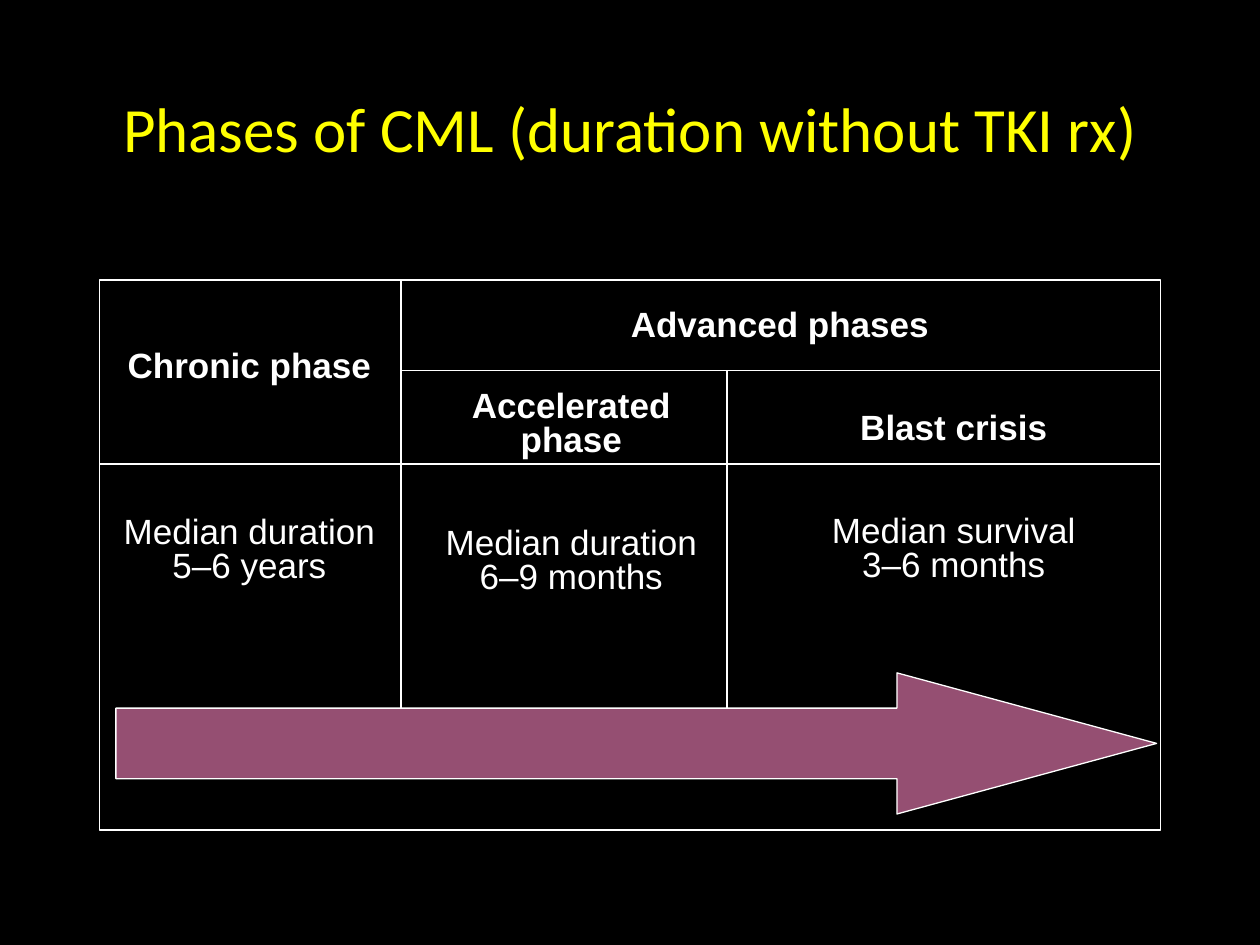
from dataclasses import dataclass

from lxml import etree
from pptx import Presentation
from pptx import util as u
from pptx.dml.color import RGBColor
from pptx.enum import shapes, text
from pptx.oxml.ns import qn


@dataclass(frozen=True)
class Theme:
    background: str = "000000"
    ink: str = "FFFFFF"
    title: str = "FFFF00"
    arrow: str = "954F72"
    title_font: str = "Calibri"
    body_font: str = "Arial"
    title_size: int = 36
    body_size: int = 20


THEME = Theme()

# Grid edges of the phase table, in inches
LEFT, ACCELERATED_X, BLAST_X, RIGHT = 0.79, 3.18, 5.77, 9.21
TOP, ADVANCED_Y, HEADER_Y, BOTTOM = 2.22, 2.94, 3.68, 6.59
DIVIDER_END = 5.8

# Box (left, top, width, height), phase, duration, gap between them in points
PHASES = [
    ((0.86, 2.74, 2.24, 2.01), "Chronic phase", "Median duration\v5–6 years", 76),
    ((3.35, 3.06, 2.37, 1.77), "Accelerated phase", "Median duration\v6–9 months", 40),
    ((5.84, 3.23, 3.46, 1.77), "Blast crisis", "Median survival\v3–6 months", 40),
    ((3.19, 2.42, 6, 0.37), "Advanced phases", None, 0),
]


def inches(*values):
    return [u.Inches(value) for value in values]


def apply(target, formats):
    for name, value in formats.items():
        setattr(target, name, value)


def add_label(slide, box, lines, anchor=text.MSO_ANCHOR.TOP, spacing=0.8):
    """Add centred text; lines holds (words, font formats, colour, gap before)."""
    frame = slide.shapes.add_textbox(*inches(*box)).text_frame
    apply(frame, {"word_wrap": True, "vertical_anchor": anchor})
    for index, (words, font, colour, gap) in enumerate(lines):
        line = frame.add_paragraph() if index else frame.paragraphs[0]
        line.text = words
        apply(line, {"alignment": text.PP_ALIGN.CENTER,
                     "line_spacing": spacing, "space_before": u.Pt(gap)})
        for run in line.runs:
            apply(run.font, font)
            run.font.color.rgb = RGBColor.from_string(colour)


def add_outlined(slide, kind, box, weight, fill=None):
    outlined = slide.shapes.add_shape(kind, *inches(*box))
    outlined.shadow.inherit = False
    if fill:
        outlined.fill.solid()
        outlined.fill.fore_color.rgb = RGBColor.from_string(fill)
    else:
        outlined.fill.background()
    outlined.line.color.rgb = RGBColor.from_string(THEME.ink)
    outlined.line.width = u.Pt(weight)
    return outlined


def add_rule(slide, *ends):
    rule = slide.shapes.add_connector(shapes.MSO_CONNECTOR.STRAIGHT, *inches(*ends))
    rule.line.color.rgb = RGBColor.from_string(THEME.ink)
    rule.line.width = u.Pt(1)
    etree.SubElement(rule._element.spPr, qn("a:effectLst"))


def add_phase(slide, box, phase, duration, gap):
    font = {"name": THEME.body_font, "size": u.Pt(THEME.body_size)}
    lines = [(phase, {**font, "bold": True}, THEME.ink, 0)]
    if duration:
        lines.append((duration, {**font, "bold": False}, THEME.ink, gap))
    add_label(slide, box, lines)


def main():
    deck = Presentation()
    deck.slide_width, deck.slide_height = inches(10, 7.5)
    slide = deck.slides.add_slide(deck.slide_layouts[6])
    slide.background.fill.solid()
    slide.background.fill.fore_color.rgb = RGBColor.from_string(THEME.background)

    # Title
    title_font = {"name": THEME.title_font, "size": u.Pt(THEME.title_size)}
    add_label(slide, (0.69, 0.32, 8.62, 1.45),
              [("Phases of CML (duration without TKI rx)", title_font, THEME.title, 0)],
              anchor=text.MSO_ANCHOR.MIDDLE, spacing=0.9)

    # Frame and phase texts
    add_outlined(slide, shapes.MSO_SHAPE.RECTANGLE,
                 (LEFT, TOP, RIGHT - LEFT, BOTTOM - TOP), 1)
    for phase in PHASES:
        add_phase(slide, *phase)

    # Dividers
    add_rule(slide, BLAST_X, ADVANCED_Y, BLAST_X, DIVIDER_END)
    add_rule(slide, RIGHT, HEADER_Y, LEFT, HEADER_Y)
    add_rule(slide, ACCELERATED_X, TOP, ACCELERATED_X, DIVIDER_END)
    add_rule(slide, RIGHT, ADVANCED_Y, ACCELERATED_X, ADVANCED_Y)

    # Progression arrow
    progression = add_outlined(slide, shapes.MSO_SHAPE.RIGHT_ARROW,
                               (0.92, 5.34, 8.26, 1.12), 0.75, THEME.arrow)
    progression.adjustments[0] = 0.5
    progression.adjustments[1] = 1.84

    deck.save("out.pptx")


if __name__ == "__main__":
    main()
